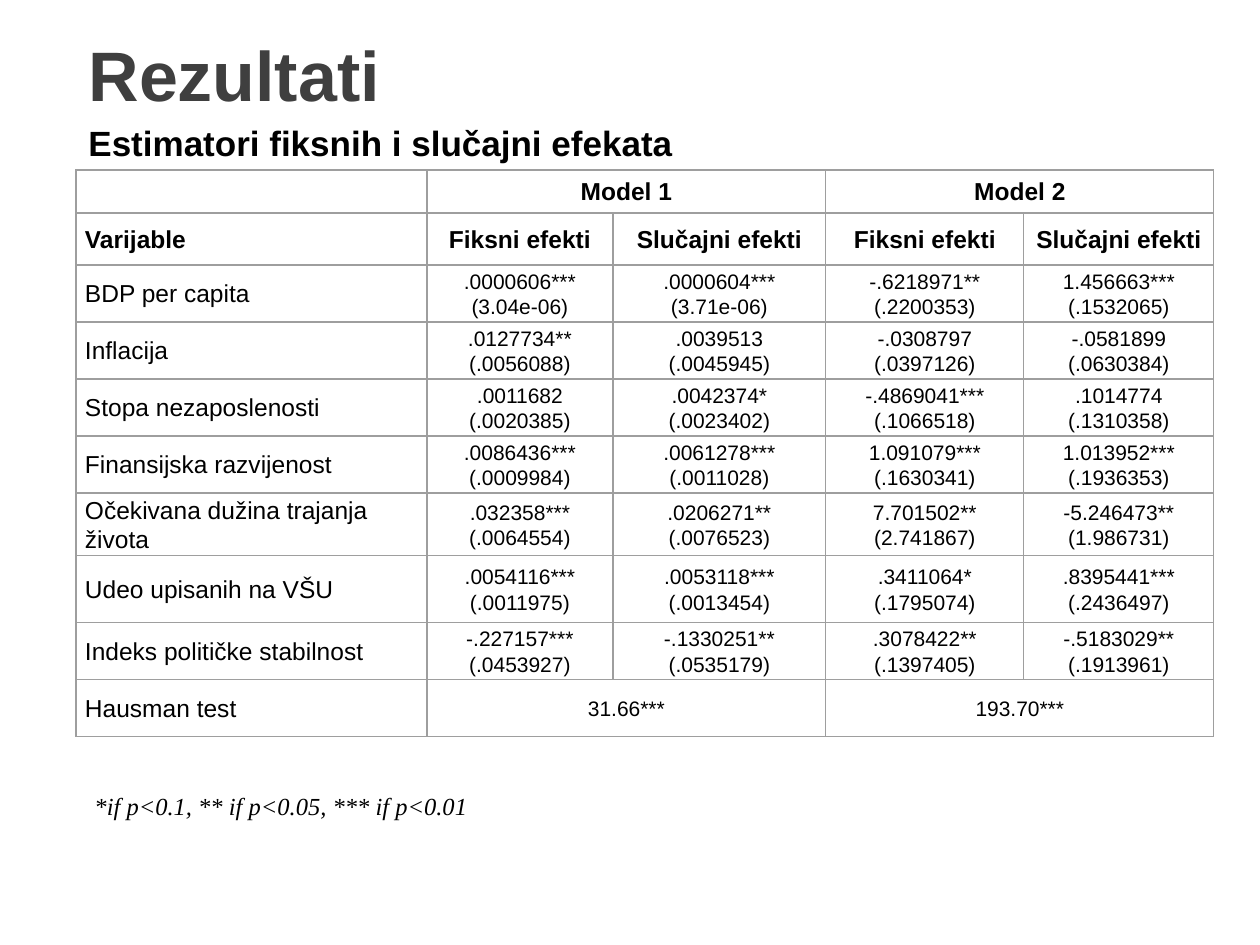
from lxml import etree
from pptx import Presentation
from pptx.dml.color import RGBColor
from pptx.enum.text import MSO_ANCHOR, PP_ALIGN
from pptx.oxml.ns import qn
from pptx.util import Pt

PX = 914400 / 126
TOP, MIDDLE = MSO_ANCHOR.TOP, MSO_ANCHOR.MIDDLE
LEFT, CENTER = PP_ALIGN.LEFT, PP_ALIGN.CENTER
BORDER = "9E9E9E"


def px(length):
    return round(length * PX)


def add_run(paragraph, text, size, color="000000", bold=False, italic=False, font="Arial"):
    run = paragraph.add_run()
    run.text = text
    run.font.name, run.font.size = font, Pt(size)
    run.font.bold, run.font.italic = bold, italic
    run.font.color.rgb = RGBColor.from_string(color)


presentation = Presentation()
presentation.slide_width, presentation.slide_height = px(1260), px(945)
slide = presentation.slides.add_slide(presentation.slide_layouts[5])

# Title
title = slide.shapes.title
title.left, title.top, title.width, title.height = px(76), px(18), px(1138), px(151)
title.text_frame.vertical_anchor = TOP
title.text_frame.margin_top = px(14)
title_paragraph = title.text_frame.paragraphs[0]
title_paragraph.alignment = LEFT
add_run(title_paragraph, "Rezultati", 40, "3F3F3F", bold=True)

# Subtitle
subtitle = slide.shapes.add_textbox(px(76), px(115), px(1176), px(55))
subtitle.text_frame.word_wrap = True
add_run(subtitle.text_frame.paragraphs[0], "Estimatori fiksnih i slučajni efekata", 20, bold=True)

# Table content: "|" separates an estimate from its standard error
rows = [
    ["", "Model 1", "", "Model 2", ""],
    ["Varijable"] + ["Fiksni efekti", "Slučajni efekti"] * 2,
    ["BDP per capita", ".0000606***|(3.04e-06)", ".0000604***|(3.71e-06)",
     "-.6218971**|(.2200353)", "1.456663***|(.1532065)"],
    ["Inflacija", ".0127734**|(.0056088)", ".0039513|(.0045945)",
     "-.0308797|(.0397126)", "-.0581899|(.0630384)"],
    ["Stopa nezaposlenosti", ".0011682|(.0020385)", ".0042374*|(.0023402)",
     "-.4869041***|(.1066518)", ".1014774|(.1310358)"],
    ["Finansijska razvijenost", ".0086436***|(.0009984)", ".0061278***|(.0011028)",
     "1.091079***|(.1630341)", "1.013952***|(.1936353)"],
    ["Očekivana dužina trajanja života", ".032358***|(.0064554)", ".0206271**|(.0076523)",
     "7.701502**|(2.741867)", "-5.246473**|(1.986731)"],
    ["Udeo upisanih na VŠU", ".0054116***|(.0011975)", ".0053118***|(.0013454)",
     ".3411064*|(.1795074)", ".8395441***|(.2436497)"],
    ["Indeks političke stabilnost", "-.227157***|(.0453927)", "-.1330251**|(.0535179)",
     ".3078422**|(.1397405)", "-.5183029**|(.1913961)"],
    ["Hausman test", "31.66***", "", "193.70***", ""],
]
column_widths = [351, 186, 213, 198, 190]
row_heights = [43, 52] + [57] * 5 + [67] + [57] * 2

# Table grid
table = slide.shapes.add_table(
    len(rows), len(column_widths), px(76), px(170),
    px(sum(column_widths)), px(sum(row_heights))).table
table.first_row = table.horz_banding = False
for column, width in zip(table.columns, column_widths):
    column.width = px(width)
for row, height in zip(table.rows, row_heights):
    row.height = px(height)

# Table cells
for row_index, values in enumerate(rows):
    for column_index, value in enumerate(values):
        cell = table.cell(row_index, column_index)
        cell.vertical_anchor = MIDDLE
        cell.margin_left = cell.margin_right = px(9)
        cell.margin_top = cell.margin_bottom = 0
        properties = cell._tc.get_or_add_tcPr()
        for side in ("a:lnL", "a:lnR", "a:lnT", "a:lnB"):
            line = etree.SubElement(properties, qn(side), w=str(Pt(0.75)))
            line_fill = etree.SubElement(line, qn("a:solidFill"))
            etree.SubElement(line_fill, qn("a:srgbClr"), val=BORDER)
        cell.fill.solid()
        cell.fill.fore_color.rgb = RGBColor.from_string("FFFFFF")
        if not value:
            continue
        header = row_index < 2
        for line_index, text in enumerate(value.split("|")):
            frame = cell.text_frame
            paragraph = frame.add_paragraph() if line_index else frame.paragraphs[0]
            paragraph.alignment = CENTER if column_index else LEFT
            paragraph.line_spacing = 1.07
            add_run(paragraph, text, 14 if header or column_index == 0 else 12, bold=header)

# Cells that span the two estimators of a model
for row_index in (0, len(rows) - 1):
    for column_index in (1, 3):
        table.cell(row_index, column_index).merge(table.cell(row_index, column_index + 1))

# Significance note
note = slide.shapes.add_textbox(px(76), px(785), px(407), px(43))
note.text_frame.word_wrap = False
add_run(note.text_frame.paragraphs[0], " *if p<0.1, ** if p<0.05, *** if p<0.01", 14,
        italic=True, font="Times New Roman")

presentation.save("out.pptx")
